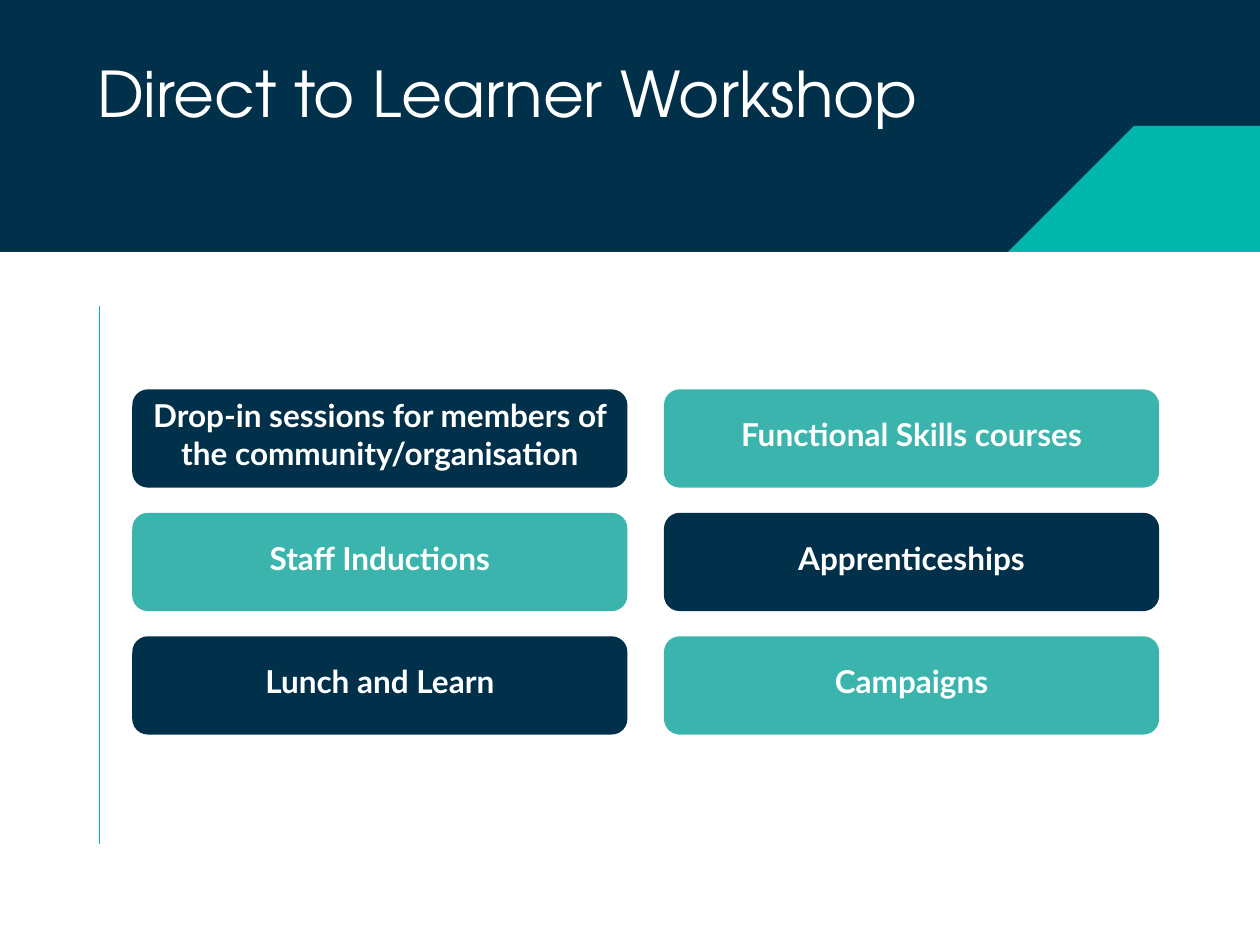
from dataclasses import dataclass

import pptx
import pptx.dml.color
import pptx.enum.shapes
import pptx.enum.text
import pptx.oxml
import pptx.oxml.ns
import pptx.util
from pptx.util import Inches


def rgb(value):
    return pptx.dml.color.RGBColor.from_string(value)


@dataclass(frozen=True)
class Theme:
    navy = rgb("00304A")
    teal = rgb("00B7AE")
    soft_teal = rgb("3AB4AD")
    white = rgb("FFFFFF")
    title_font = "TeX Gyre Adventor"
    card_font = "Lato"
    title_size = pptx.util.Pt(36)
    card_size = pptx.util.Pt(18)
    rule_width = pptx.util.Pt(0.75)


THEME = Theme()
CURVE_STEPS = 32


def curve(start, control_1, control_2, end):
    """Points along a cubic curve, without its start."""
    points = []
    for step in range(1, CURVE_STEPS + 1):
        t = step / CURVE_STEPS
        weights = ((1 - t) ** 3, 3 * t * (1 - t) ** 2, 3 * t * t * (1 - t), t ** 3)
        corners = (start, control_1, control_2, end)
        points.append(tuple(sum(w * corner[axis] for w, corner in zip(weights, corners))
                            for axis in (0, 1)))
    return points


def add_band(page, points, color):
    builder = page.shapes.build_freeform(*points[0], scale=Inches(1))
    builder.add_line_segments(points[1:], close=True)
    band = builder.convert_to_shape()
    band.shadow.inherit = False
    band.fill.solid()
    band.fill.fore_color.rgb = color
    band.line.fill.background()


def add_header(page, left, top, right):
    navy_right, navy_left = (right, 1.55), (left, 1.82)
    add_band(page, [(left, top), (right, top), navy_right]
             + curve(navy_right, (6.64, 1.64), (3.29, 2.27), navy_left), THEME.navy)

    upper_left, upper_right = (left, 1.59), (right, 1.38)
    lower_right, lower_left = (right, 1.72), (left, 1.95)
    add_band(page, [upper_left]
             + curve(upper_left, (2.03, 2.02), (6.75, 1.68), upper_right)
             + [lower_right]
             + curve(lower_right, (5.29, 2), (1.35, 2.37), lower_left), THEME.teal)


def add_title(page, text, left, top, width, height):
    title = page.shapes.title
    title.left, title.top, title.width, title.height = left, top, width, height
    frame = title.text_frame
    frame.text = text
    frame.vertical_anchor = pptx.enum.text.MSO_ANCHOR.TOP
    para = frame.paragraphs[0]
    para.alignment = pptx.enum.text.PP_ALIGN.LEFT
    para.line_spacing = 0.9
    para.font.name = THEME.title_font
    para.font.size = THEME.title_size
    para.font.color.rgb = THEME.white
    # Bring the title in front of the header bands
    title.element.getparent().append(title.element)


def add_side_rule(page, left, top, bottom):
    rule = page.shapes.add_connector(
        pptx.enum.shapes.MSO_CONNECTOR.STRAIGHT, left, top, left, bottom)
    rule.line.color.rgb = THEME.teal
    rule.line.width = THEME.rule_width
    properties = rule.element.find(pptx.oxml.ns.qn("p:spPr"))
    properties.append(pptx.oxml.parse_xml(
        f'<a:effectLst {pptx.oxml.ns.nsdecls("a")}/>'))


def add_card(page, text, color, left, top, width, height):
    card = page.shapes.add_shape(
        pptx.enum.shapes.MSO_SHAPE.ROUNDED_RECTANGLE, left, top, width, height)
    card.adjustments[0] = 0.16
    card.shadow.inherit = False
    card.fill.solid()
    card.fill.fore_color.rgb = color
    card.line.fill.background()
    frame = card.text_frame
    frame.word_wrap = True
    frame.margin_left = frame.margin_right = frame.margin_top = 0
    frame.margin_bottom = Inches(0.07)
    frame.vertical_anchor = pptx.enum.text.MSO_ANCHOR.MIDDLE
    frame.text = text
    para = frame.paragraphs[0]
    para.alignment = pptx.enum.text.PP_ALIGN.CENTER
    para.font.name = THEME.card_font
    para.font.size = THEME.card_size
    para.font.bold = True
    para.font.color.rgb = THEME.white


def add_card_grid(page, rows, left, top, column_pitch, row_pitch):
    """Cards in a grid whose two colours alternate like a chequerboard."""
    colors = (THEME.navy, THEME.soft_teal)
    for row, texts in enumerate(rows):
        for column, text in enumerate(texts):
            add_card(page, text, colors[(row + column) % 2],
                     left + column * column_pitch, top + row * row_pitch,
                     Inches(3.93), Inches(0.78))


def main():
    deck = pptx.Presentation()
    deck.slide_width, deck.slide_height = Inches(10), Inches(7.5)
    page = deck.slides.add_slide(deck.slide_layouts.get_by_name("Title Only"))

    add_header(page, left=-0.02, top=-0.09, right=10.01)
    add_side_rule(page, Inches(0.79), Inches(2.43), Inches(6.7))
    add_title(page, "Direct to Learner Workshop",
              Inches(0.67), Inches(0.45), Inches(8.73), Inches(1.27))
    add_card_grid(page, [
        ("Drop-in sessions for members of the community/organisation",
         "Functional Skills courses"),
        ("Staff Inductions", "Apprenticeships"),
        ("Lunch and Learn", "Campaigns"),
    ], Inches(1.05), Inches(3.09), Inches(4.22), Inches(0.98))

    deck.save("out.pptx")


if __name__ == "__main__":
    main()
